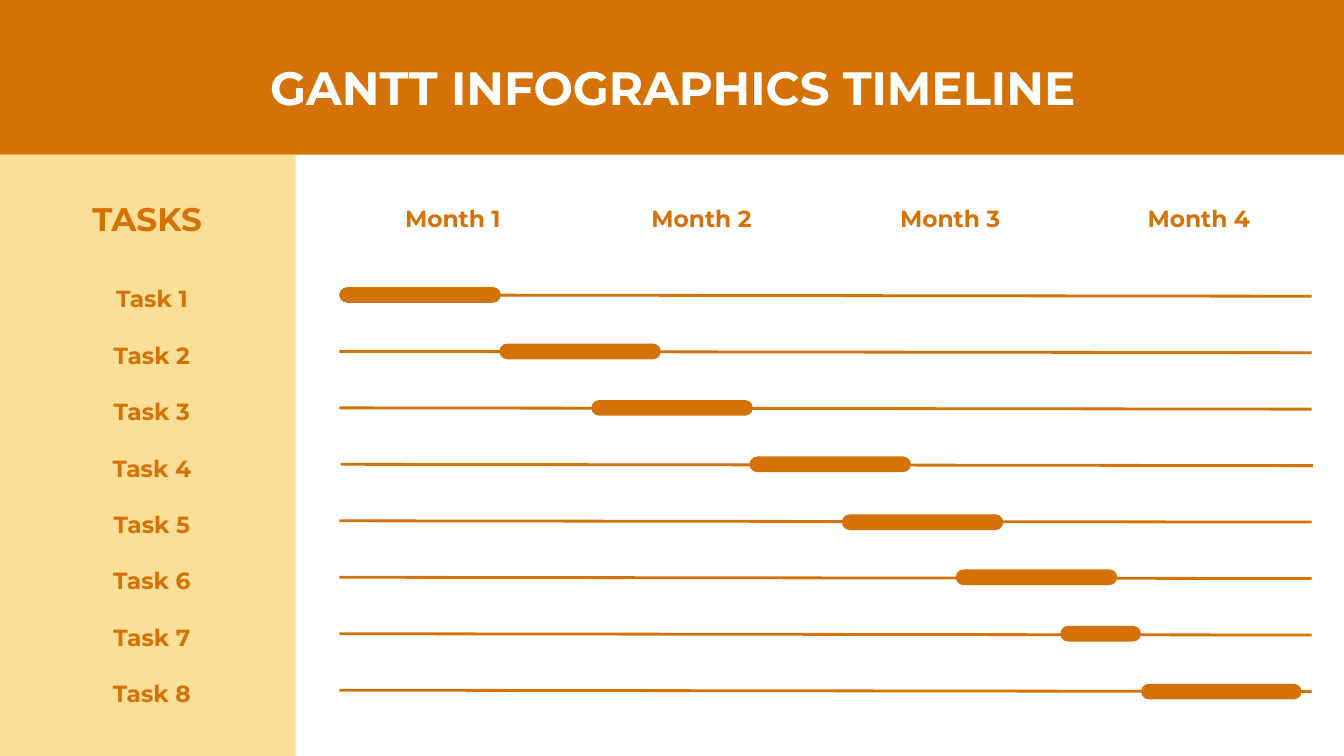
from pptx import Presentation
from pptx.dml.color import RGBColor
from pptx.enum import shapes, text
from pptx.oxml import ns, xmlchemy
from pptx.util import Pt

ORANGE = RGBColor(0xD4, 0x72, 0x08)
YELLOW = RGBColor(0xF9, 0xBF, 0x32)
WHITE = RGBColor(0xFF, 0xFF, 0xFF)

ROW = 60.5       # distance between tasks
MONTH = 266.4    # distance between months
AXIS = 316       # height of the first task line
LEFT, RIGHT = 363.6, 1405.4
SLOPE = 1.4      # fall of each line from left to right
THICK = 16.8

# Start, length, nudge down of the bar, nudge right of the line
TASKS = [
    (363.6, 173, 0, 0),
    (535, 173, 0, 0),
    (633.6, 173, 0, 0),
    (803, 173, 0, 1.4),
    (902, 173, 1.5, 0),
    (1024, 173, 0, 0),
    (1136, 86.5, 0, 0),
    (1222.6, 172, 1.5, 0),
]


def add_block(slide, kind, x, y, w, h, color):
    block = slide.shapes.add_shape(kind, Pt(x), Pt(y), Pt(w), Pt(h))
    block.shadow.inherit = False
    block.fill.solid()
    block.fill.fore_color.rgb = color
    block.line.fill.background()
    return block


def fade(block, percent):
    tone = block.fill._xPr.find(".//" + ns.qn("a:srgbClr"))
    alpha = xmlchemy.OxmlElement("a:alpha")
    alpha.set("val", str(percent * 1000))
    tone.append(alpha)


def add_bar(slide, x, y, w):
    kind = shapes.MSO_SHAPE.ROUNDED_RECTANGLE
    bar = add_block(slide, kind, x, y, w, THICK, ORANGE)
    bar.adjustments[0] = 0.5


def add_line(slide, x1, y1, x2, y2):
    line = slide.shapes.add_connector(
        shapes.MSO_CONNECTOR.STRAIGHT, Pt(x1), Pt(y1), Pt(x2), Pt(y2))
    line.line.color.rgb = ORANGE
    line.line.width = Pt(3)
    line._element.spPr.append(xmlchemy.OxmlElement("a:effectLst"))


def add_label(slide, words, x, y, w, h, size=25, color=ORANGE):
    frame = slide.shapes.add_textbox(Pt(x), Pt(y), Pt(w), Pt(h)).text_frame
    layout = {
        "margin_left": 0, "margin_top": 0,
        "margin_right": 0, "margin_bottom": 0,
        "word_wrap": True,
        "auto_size": text.MSO_AUTO_SIZE.SHAPE_TO_FIT_TEXT,
    }
    for key, value in layout.items():
        setattr(frame, key, value)
    para = frame.paragraphs[0]
    para.alignment = text.PP_ALIGN.CENTER
    run = para.add_run()
    run.text = words
    style = {"name": "Montserrat", "size": Pt(size), "bold": True}
    for key, value in style.items():
        setattr(run.font, key, value)
    run.font.color.rgb = color


def main():
    deck = Presentation()
    deck.slide_width, deck.slide_height = Pt(1440), Pt(810)
    slide = deck.slides.add_slide(deck.slide_layouts[6])

    # Header and task panel
    box = shapes.MSO_SHAPE.RECTANGLE
    add_block(slide, box, 0, 0, 1440, 165.6, ORANGE)
    panel = add_block(slide, box, 0, 165.6, 316.8, 644.4, YELLOW)
    fade(panel, 50)
    add_label(slide, "GANTT INFOGRAPHICS TIMELINE",
              80.6, 63.4, 1281, 53.3, 50, WHITE)

    # Column headings
    add_label(slide, "TASKS", 56.2, 213.1, 203, 36.7, 35)
    for i in range(4):
        add_label(slide, f"Month {i + 1}",
                  393.1 + i * MONTH, 218.9, 184.3, 26.6)

    # Task rows: name, line and bar
    for i, (start, length, down, shift) in enumerate(TASKS):
        y = AXIS + i * ROW
        add_label(slide, f"Task {i + 1}", 66.2, y - 11.4, 193, 26.6)
        add_line(slide, LEFT + shift, y, RIGHT + shift, y + SLOPE)
        add_bar(slide, start, y - THICK / 2 + down, length)

    deck.save("out.pptx")


if __name__ == "__main__":
    main()
